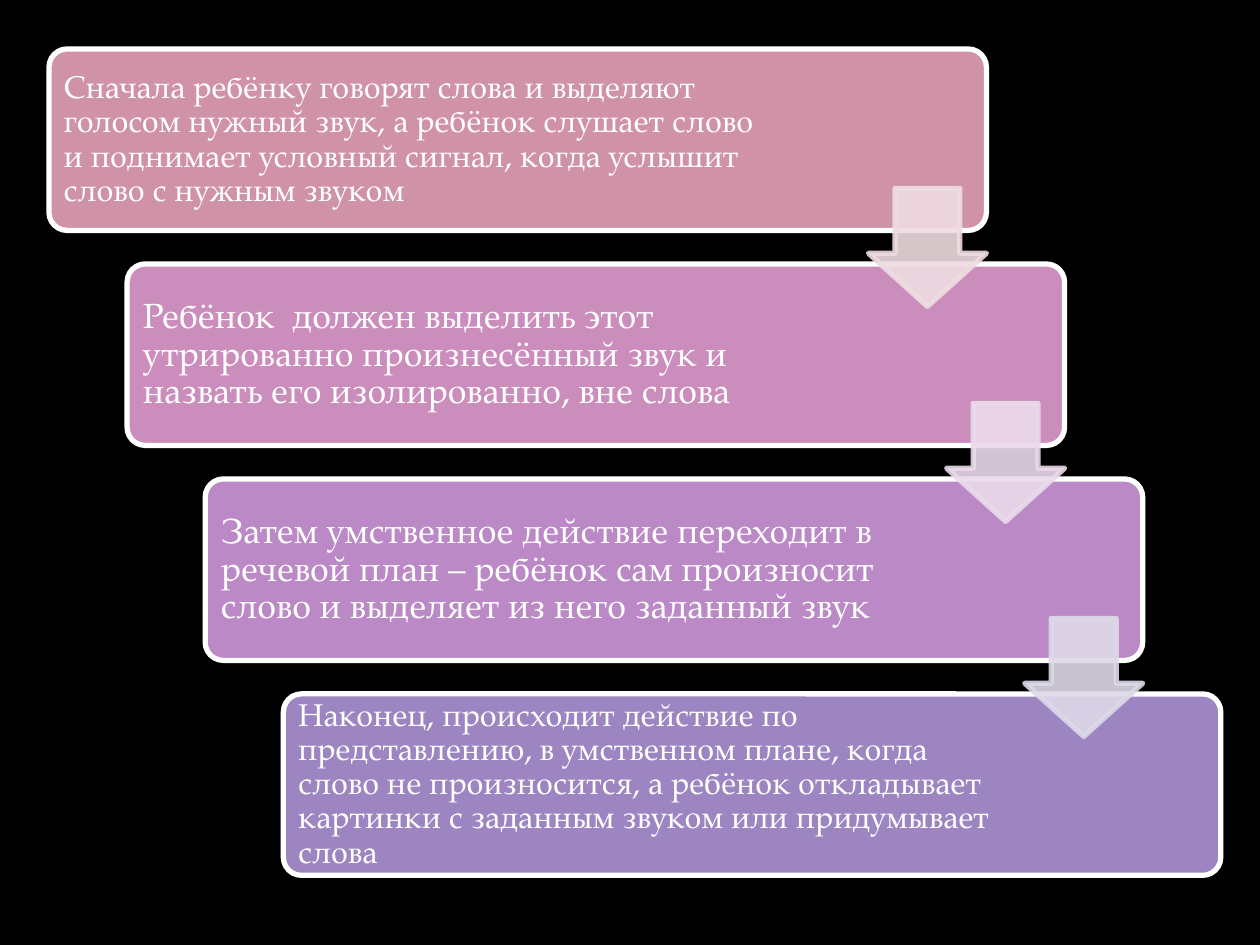
from lxml.etree import SubElement
from pptx import Presentation
from pptx.dml.color import RGBColor
from pptx.enum.shapes import MSO_SHAPE as Shape
from pptx.enum.text import MSO_ANCHOR as Anchor
from pptx.oxml.ns import qn
from pptx.util import Pt

STEPS = [
    ("Сначала ребёнку говорят слова и выделяют голосом нужный звук, а ребёнок "
     "слушает слово и поднимает условный сигнал, когда услышит слово с нужным звуком",
     18, 414.7, "D092A7"),
    ("Ребёнок  должен выделить этот утрированно произнесённый звук и назвать "
     "его изолированно, вне слова", 20, 416.9, "CB8DBC"),
    ("Затем умственное действие переходит в речевой план – ребёнок сам "
     "произносит слово и выделяет из него заданный звук", 20, 417.6, "BA89C6"),
    ("Наконец, происходит действие по представлению, в умственном плане, когда "
     "слово не произносится, а ребёнок откладывает картинки с заданным звуком "
     "или придумывает слова", 18, 416.9, "9C85C0"),
]
ARROW_COLORS = ["EEDCE1", "EBDAEB", "DED9E8"]

LEFT, TOP = 28, 28
STEP_X, STEP_Y = 44.65, 122.85
BOX_W, BOX_H = 535.7, 103.7
TEXT_GAP = 3
ARROW = 67.4
ARROW_DX, ARROW_DY = BOX_W - ARROW, 79.7


def color(hex_code):
    return RGBColor.from_string(hex_code)


def set_opacity(fill_format, percent):
    """Make a solid fill partly transparent; python-pptx has no public way."""
    rgb = fill_format._xPr.find(".//" + qn("a:srgbClr"))
    SubElement(rgb, qn("a:alpha")).set("val", str(percent * 1000))


class Canvas:
    font = "TeX Gyre Pagella"
    white = "FFFFFF"
    line_width = 3

    def __init__(self, slide, background):
        self.slide = slide
        slide.background.fill.solid()
        slide.background.fill.fore_color.rgb = color(background)

    def shape(self, kind, x, y, w, h, fill, line, adjustments):
        item = self.slide.shapes.add_shape(kind, Pt(x), Pt(y), Pt(w), Pt(h))
        item.shadow.inherit = False
        for index, value in enumerate(adjustments):
            item.adjustments[index] = value
        item.fill.solid()
        item.fill.fore_color.rgb = color(fill)
        item.line.width = Pt(self.line_width)
        item.line.fill.solid()
        item.line.fill.fore_color.rgb = color(line)
        return item

    def box(self, x, y, fill):
        self.shape(Shape.ROUNDED_RECTANGLE, x, y, BOX_W, BOX_H, fill, self.white, [0.1])

    def arrow(self, x, y, tint):
        # The down arrow lists its shaft width before its head length.
        arrow = self.shape(Shape.DOWN_ARROW, x, y, ARROW, ARROW, tint, tint, [0.55, 0.45])
        set_opacity(arrow.fill, 90)
        set_opacity(arrow.line.fill, 90)

    def text(self, words, x, y, w, h, *, size, inset):
        frame = self.slide.shapes.add_textbox(Pt(x), Pt(y), Pt(w), Pt(h)).text_frame
        frame.word_wrap = True
        frame.vertical_anchor = Anchor.MIDDLE
        frame.margin_left = frame.margin_right = Pt(inset)
        frame.margin_top = frame.margin_bottom = Pt(inset)
        paragraph = frame.paragraphs[0]
        paragraph.line_spacing = 0.9
        run = paragraph.add_run()
        run.text = words
        run.font.name = self.font
        run.font.size = Pt(size)
        run.font.color.rgb = color(self.white)


def main():
    deck = Presentation()
    deck.slide_width, deck.slide_height = Pt(720), Pt(540)
    canvas = Canvas(deck.slides.add_slide(deck.slide_layouts[6]), "000000")

    corners = [(LEFT + i * STEP_X, TOP + i * STEP_Y) for i in range(len(STEPS))]
    for (x, y), (words, size, text_w, fill) in zip(corners, STEPS):
        canvas.box(x, y, fill)
        canvas.text(words, x + TEXT_GAP, y + TEXT_GAP, text_w, BOX_H - 2 * TEXT_GAP,
                    size=size, inset=size * 0.3)
    for (x, y), tint in zip(corners, ARROW_COLORS):
        canvas.arrow(x + ARROW_DX, y + ARROW_DY, tint)

    deck.save("out.pptx")


if __name__ == "__main__":
    main()
